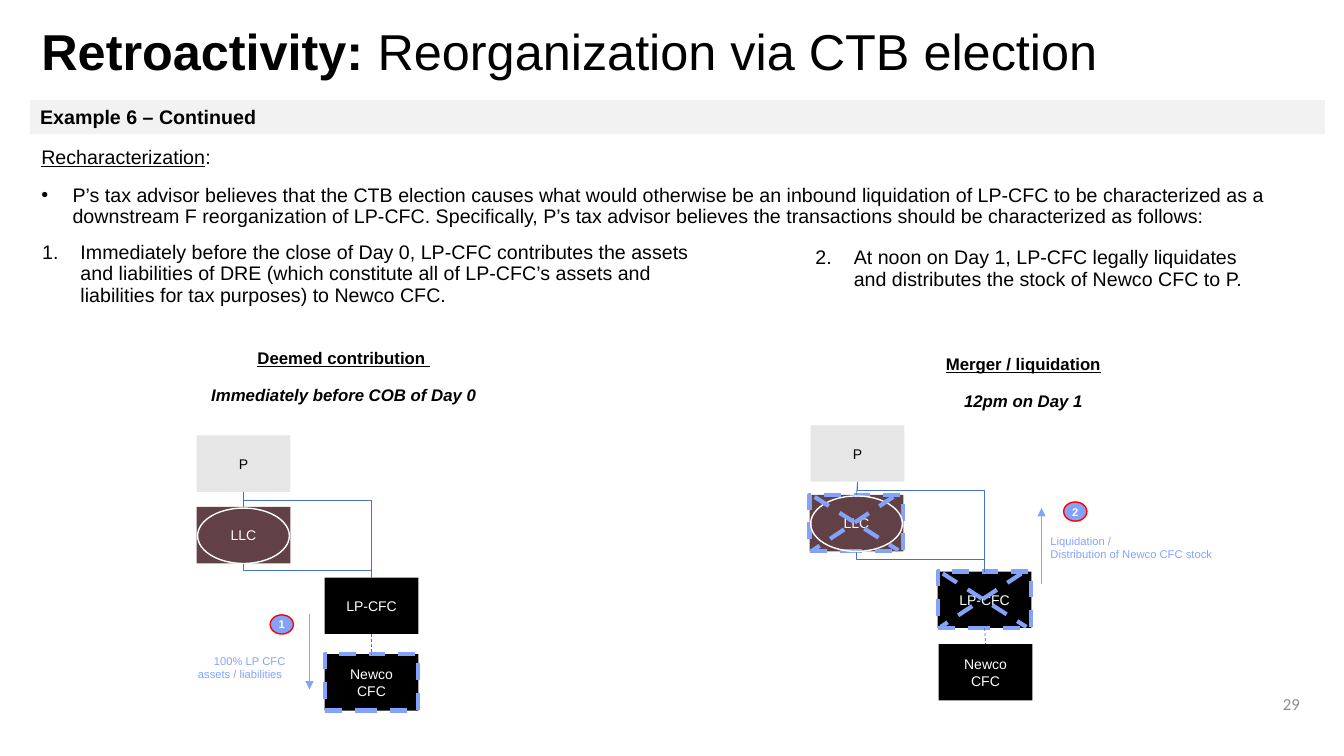
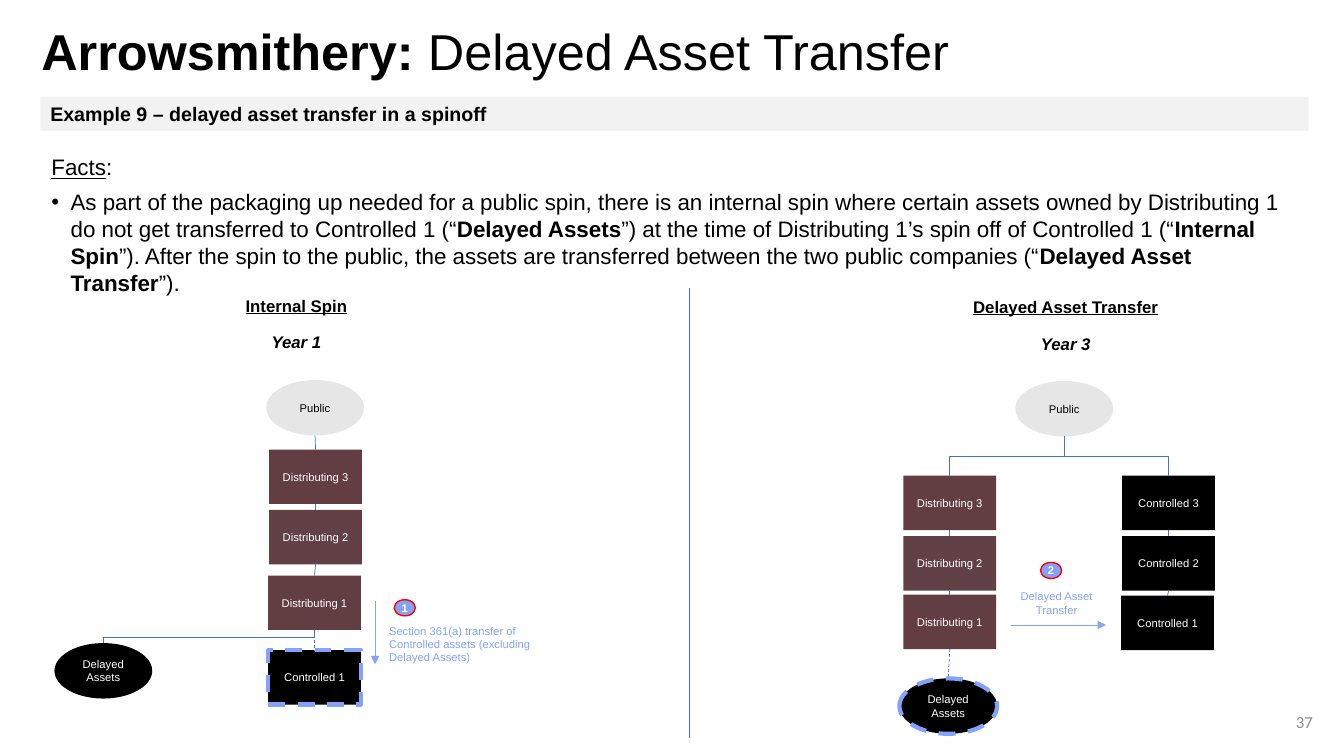
from lxml.etree import SubElement
from pptx import Presentation
from pptx.dml.color import RGBColor
from pptx.enum.dml import MSO_LINE
from pptx.enum.shapes import MSO_CONNECTOR, MSO_SHAPE
from pptx.enum.text import MSO_ANCHOR, MSO_AUTO_SIZE, PP_ALIGN
from pptx.oxml.ns import qn
from pptx.util import Emu, Pt

PX = 9144  # EMU per px, 100 px to the inch

BLACK = RGBColor(0x00, 0x00, 0x00)
WHITE = RGBColor(0xFF, 0xFF, 0xFF)
BAND = RGBColor(0xF2, 0xF2, 0xF2)
GREY = RGBColor(0xE7, 0xE6, 0xE6)
BROWN = RGBColor(0x61, 0x41, 0x46)
DARK_BROWN = RGBColor(0x62, 0x3D, 0x41)
NUMBER_GREY = RGBColor(0x8C, 0x8C, 0x8C)
LINK_BLUE = RGBColor(0x44, 0x72, 0xC4)
NOTE_BLUE = RGBColor(0x84, 0xA3, 0xFE)
MARK_BLUE = RGBColor(0x83, 0xA2, 0xF9)
RED = RGBColor(0xFF, 0x00, 0x00)

LEFT, CENTER, RIGHT = PP_ALIGN.LEFT, PP_ALIGN.CENTER, PP_ALIGN.RIGHT
RECT, OVAL = MSO_SHAPE.RECTANGLE, MSO_SHAPE.OVAL
TITLE_AREA = (31, 20, 1150, 67)
HEADING_SIZE = (394, 67)

# Content: boxes are label: (x, y, shape, fill, dashed outline)
# links are (upper, lower, dashed), elbows are (upper, lower, drop before the bend)
PAGES = [
    {
        "title": [("Retroactivity: ", "b"), ("Reorganization via CTB election", "")],
        "band": ("Example 6 – Continued", 30, 99, 1284, 34),
        "number": ("29", 999, 678),
        "body": {
            "area": (31, 141, 1245, 119), "size": 14, "line": 0.9, "hang": 31, "lead_gap": 6,
            "lead": [("Recharacterization", "u"), (":", "")],
            "bullet": [("P’s tax advisor believes that the CTB election causes what would otherwise be an "
                        "inbound liquidation of LP-CFC to be characterized as a downstream F reorganization "
                        "of LP-CFC. Specifically, P’s tax advisor believes the transactions should be "
                        "characterized as follows:", "")],
        },
        "steps": [
            ("Immediately before the close of Day 0, LP-CFC contributes the assets and liabilities of DRE "
             "(which constitute all of LP-CFC’s assets and liabilities for tax purposes) to Newco CFC.",
             0, 236, 710, 67),
            ("At noon on Day 1, LP-CFC legally liquidates and distributes the stock of Newco CFC to P.",
             767, 241, 507, 75),
        ],
        "sizes": {RECT: (93, 56)}, "label_size": 10, "badge": (23, 19),
        "diagrams": [
            {
                "heading": ("Deemed contribution ", "Immediately before COB of Day 0", 144, 340),
                "boxes": {
                    "P": (195, 432, RECT, GREY, False),
                    "LLC": (195, 503, RECT, BROWN, False),
                    "LP-CFC": (322, 573, RECT, BLACK, False),
                    "Newco CFC": (322, 649, RECT, BLACK, True),
                },
                "rings": ["LLC"], "crossed": [],
                "links": [("P", "LLC", False), ("LP-CFC", "Newco CFC", True)],
                "elbows": [("P", "LP-CFC", 8), ("LLC", "LP-CFC", 7)],
                "arrow": (307, 609, 307, 684),
                "badge": ("1", 268, 610),
                "note": ("100% LP CFC assets / liabilities ", 168, 644, 125, 37, RIGHT),
            },
            {
                "heading": ("Merger / liquidation", "12pm on Day 1", 818, 346),
                "boxes": {
                    "P": (804, 422, RECT, GREY, False),
                    "LLC": (803, 491, RECT, BROWN, True),
                    "LP-CFC": (930, 567, RECT, BLACK, True),
                    "Newco CFC": (931, 639, RECT, BLACK, False),
                },
                "rings": ["LLC"], "crossed": ["LLC", "LP-CFC"],
                "links": [("P", "LLC", False), ("LP-CFC", "Newco CFC", True)],
                "elbows": [("P", "LP-CFC", 8), ("LLC", "LP-CFC", 8)],
                "arrow": (1033, 579, 1033, 504),
                "badge": ("2", 1055, 498),
                "note": ("Liquidation /\nDistribution of Newco CFC stock", 1032, 525, 205, 45, LEFT),
            },
        ],
        "divider": None,
    },
    {
        "title": [("Arrowsmithery: ", "b"), ("Delayed Asset Transfer", "")],
        "band": ("Example 9 – delayed asset transfer in a spinoff", 40, 96, 1258, 34),
        "number": ("37", 1012, 696),
        "body": {
            "area": (41, 147, 1250, 215), "size": 16, "line": 1.0, "hang": 19, "lead_gap": 0,
            "lead": [("Facts", "u"), (":", "")],
            "bullet": [
                ("As part of the packaging up needed for a public spin, there is an internal spin where "
                 "certain assets owned by Distributing 1 do not get transferred to Controlled 1 (“", ""),
                ("Delayed Assets", "b"),
                ("”) at the time of Distributing 1’s spin off of Controlled 1 (“", ""),
                ("Internal Spin", "b"),
                ("”). After the spin to the public, the assets are transferred between the two public "
                 "companies (“", ""),
                ("Delayed Asset Transfer", "b"), ("”).", "")],
        },
        "steps": [],
        "sizes": {RECT: (92, 54), OVAL: (97, 55)}, "label_size": 8, "badge": (21, 16),
        "diagrams": [
            {
                "heading": ("Internal Spin", "Year 1", 97, 288),
                "boxes": {
                    "Public": (264, 377, OVAL, GREY, False),
                    "Distributing 3": (267, 446, RECT, DARK_BROWN, False),
                    "Distributing 2": (267, 506, RECT, BROWN, False),
                    "Distributing 1": (266, 571, RECT, DARK_BROWN, False),
                    "Controlled 1": (266, 645, RECT, BLACK, True),
                    "Delayed\nAssets": (54, 638, OVAL, BLACK, False),
                },
                "rings": [], "crossed": [],
                "links": [("Public", "Distributing 3", False), ("Distributing 3", "Distributing 2", False),
                          ("Distributing 2", "Distributing 1", False),
                          ("Distributing 1", "Controlled 1", True)],
                "elbows": [("Distributing 1", "Delayed\nAssets", 7)],
                "arrow": (372, 596, 372, 659),
                "badge": ("1", 391, 595),
                "note": ("Section 361(a) transfer of Controlled assets (excluding Delayed Assets)",
                         376, 614, 185, 50, LEFT),
            },
            {
                "heading": ("Delayed Asset Transfer", "Year 3", 860, 289),
                "boxes": {
                    "Public": (1007, 378, OVAL, GREY, False),
                    "Distributing 3": (896, 472, RECT, DARK_BROWN, False),
                    "Distributing 2": (896, 532, RECT, BROWN, False),
                    "Distributing 1": (896, 590, RECT, DARK_BROWN, False),
                    "Controlled 3": (1113, 472, RECT, BLACK, False),
                    "Controlled 2": (1113, 532, RECT, BLACK, False),
                    "Controlled 1": (1112, 591, RECT, BLACK, False),
                    "Delayed\nAssets": (892, 673, OVAL, BLACK, True),
                },
                "rings": [], "crossed": [],
                "links": [("Distributing 3", "Distributing 2", False),
                          ("Distributing 2", "Distributing 1", False),
                          ("Controlled 3", "Controlled 2", False), ("Controlled 2", "Controlled 1", False),
                          ("Distributing 1", "Delayed\nAssets", True)],
                "elbows": [("Public", "Distributing 3", 20), ("Public", "Controlled 3", 20)],
                "arrow": (1003, 620, 1097, 620),
                "badge": ("2", 1032, 558),
                "note": ("Delayed Asset Transfer", 990, 580, 116, 37, CENTER),
            },
        ],
        "divider": (684, 286, 684, 732),
    },
]


def emu(*lengths):
    return [Emu(round(length * PX)) for length in lengths]


# Text
def format_para(para, size, color=BLACK, align=LEFT, flags="", font="Arial"):
    para.alignment = align
    for span in para.runs:
        span.font.name, span.font.size, span.font.color.rgb = font, Pt(size), color
        span.font.bold, span.font.italic, span.font.underline = (flag in flags for flag in "biu")


def write_spans(para, spans, size):
    for text, _ in spans:
        para.add_run().text = text
    format_para(para, size)
    for span, (_, flags) in zip(para.runs, spans):
        span.font.bold, span.font.underline = "b" in flags, "u" in flags


def space_para(para, line=1.0, gap=6):
    para.line_spacing = line
    para.space_before = para.space_after = Pt(gap)


def set_bullet(para, kind, margin=0, hang=0, **settings):
    properties = para._p.get_or_add_pPr()
    properties.set("marL", str(margin * PX))
    properties.set("indent", str(-hang * PX))
    SubElement(properties, qn(f"a:{kind}"), settings)


def add_text(page, text, area, size, color=BLACK, align=LEFT, font="Arial"):
    box = page.shapes.add_textbox(*emu(*area))
    frame = box.text_frame
    frame.word_wrap = True
    frame.text = text
    for para in frame.paragraphs:
        format_para(para, size, color, align, font=font)
    return frame


def place(holder, area):
    holder.left, holder.top, holder.width, holder.height = emu(*area)
    holder.text_frame.auto_size = MSO_AUTO_SIZE.NONE
    return holder.text_frame


# Shapes and lines
def add_shape(page, kind, area, fill=None, line=None, width=1, dashed=False):
    box = page.shapes.add_shape(kind, *emu(*area))
    box.shadow.inherit = False
    if fill is None:
        box.fill.background()
    else:
        box.fill.solid()
        box.fill.fore_color.rgb = fill
    if line is None:
        box.line.fill.background()
    else:
        box.line.color.rgb, box.line.width = line, Pt(width)
        if dashed:
            box.line.dash_style = MSO_LINE.DASH
    return box


def label_shape(box, text, size, color, flags=""):
    frame = box.text_frame
    frame.text = text
    frame.vertical_anchor = MSO_ANCHOR.MIDDLE
    for para in frame.paragraphs:
        format_para(para, size, color, CENTER, flags)


def add_line(page, ends, color=LINK_BLUE, width=0.5, dashed=False, arrow=False,
             kind=MSO_CONNECTOR.STRAIGHT):
    line = page.shapes.add_connector(kind, *emu(*ends))
    line.line.color.rgb, line.line.width = color, Pt(width)
    if dashed:
        line.line.dash_style = MSO_LINE.DASH
    properties = line._element.spPr
    if arrow:
        SubElement(properties.find(qn("a:ln")), qn("a:tailEnd"), type="triangle")
    SubElement(properties, qn("a:effectLst"))
    return line


def gap_between(upper, lower):
    (x1, y1, w1, h1), (x2, y2, w2, _) = upper, lower
    return x1 + w1 / 2, y1 + h1, x2 + w2 / 2, y2


def add_elbow(page, ends, drop):
    """A turned elbow that leaves downwards, bends after the drop, and arrives downwards."""
    x1, y1, x2, y2 = ends
    across, down = abs(x2 - x1), y2 - y1
    left, top = (x1 + x2 - down) / 2, (y1 + y2 - across) / 2
    elbow = add_line(page, (left, top, left + down, top + across), kind=MSO_CONNECTOR.ELBOW)
    frame = elbow._element.spPr.find(qn("a:xfrm"))
    frame.set("rot", "16200000" if x2 > x1 else "5400000")
    if x2 > x1:
        frame.set("flipH", "1")
    guides = elbow._element.spPr.find(qn("a:prstGeom")).get_or_add_avLst()
    SubElement(guides, qn("a:gd"), name="adj1", fmla=f"val {round(drop / down * 100000)}")


# Diagram
def draw_diagram(page, diagram, sizes, label_size, badge_size):
    title, time, x, y = diagram["heading"]
    heading = add_text(page, f"{title}\n{time}", (x, y, *HEADING_SIZE), 12)
    for para, flags in zip(heading.paragraphs, ("bu", "bi")):
        format_para(para, 12, align=CENTER, flags=flags)
        space_para(para)

    areas, boxes = {}, {}
    for label, (x, y, kind, fill, dashed) in diagram["boxes"].items():
        areas[label] = (x, y, *sizes[kind])
        box = add_shape(page, kind, areas[label], fill, MARK_BLUE if dashed else None, 3, dashed)
        label_shape(box, label, label_size, BLACK if fill == GREY else WHITE)
        box.text_frame.word_wrap = kind == RECT
        boxes[label] = box

    for upper, lower, dashed in diagram["links"]:
        link = add_line(page, gap_between(areas[upper], areas[lower]), dashed=dashed)
        if diagram["boxes"][upper][2] == RECT:
            link.begin_connect(boxes[upper], 2)
        if diagram["boxes"][lower][2] == RECT:
            link.end_connect(boxes[lower], 0)
    for upper, lower, drop in diagram["elbows"]:
        add_elbow(page, gap_between(areas[upper], areas[lower]), drop)

    for label in diagram["rings"]:
        x, y, w, h = areas[label]
        add_shape(page, OVAL, (x + 1, y + 1, w - 2, h - 1), line=WHITE)
    for label in diagram["crossed"]:
        x, y, w, h = areas[label]
        for start, end in ((5, w - 5), (w - 10, 3)):
            add_line(page, (x + start, y + 2, x + end, y + h - 1), MARK_BLUE, 3, dashed=True)

    add_line(page, diagram["arrow"], NOTE_BLUE, arrow=True)
    text, *area, align = diagram["note"]
    add_text(page, text, area, 8, NOTE_BLUE, align)
    text, x, y = diagram["badge"]
    badge = add_shape(page, OVAL, (x, y, *badge_size), MARK_BLUE, RED)
    label_shape(badge, text, 8, WHITE, "b")
    frame = badge.text_frame
    frame.margin_left = frame.margin_right = frame.margin_top = frame.margin_bottom = 0


def draw_page(deck, content):
    page = deck.slides.add_slide(deck.slide_layouts[1])

    # Title, band and page number
    frame = place(page.shapes.title, TITLE_AREA)
    frame.vertical_anchor = MSO_ANCHOR.MIDDLE
    write_spans(frame.paragraphs[0], content["title"], 36)
    frame.paragraphs[0].line_spacing = 0.9
    text, *area = content["band"]
    band = add_shape(page, RECT, area, BAND)
    label_shape(band, text, 14, BLACK, "b")
    band.text_frame.paragraphs[0].alignment = LEFT
    text, x, y = content["number"]
    number = add_text(page, text, (x, y, 300, 40), 12, NUMBER_GREY, RIGHT, "Calibri")
    number.vertical_anchor = MSO_ANCHOR.MIDDLE

    # Body and numbered steps
    body = content["body"]
    frame = place(page.placeholders[1], body["area"])
    lead, bullet = frame.paragraphs[0], frame.add_paragraph()
    for para, spans, gap in ((lead, body["lead"], body["lead_gap"]), (bullet, body["bullet"], 6)):
        write_spans(para, spans, body["size"])
        space_para(para, body["line"], gap)
    set_bullet(lead, "buNone")
    set_bullet(bullet, "buChar", body["hang"], body["hang"], char="•")
    for index, (text, *area) in enumerate(content["steps"], 1):
        step = add_text(page, text, area, 14).paragraphs[0]
        space_para(step, 0.9)
        set_bullet(step, "buAutoNum", 70, 38, type="arabicPeriod", startAt=str(index))

    if content["divider"]:
        add_line(page, content["divider"])
    for diagram in content["diagrams"]:
        draw_diagram(page, diagram, content["sizes"], content["label_size"], content["badge"])


def main():
    deck = Presentation()
    deck.slide_width, deck.slide_height = emu(1333, 750)
    for content in PAGES:
        draw_page(deck, content)
    deck.save("out.pptx")


if __name__ == "__main__":
    main()
